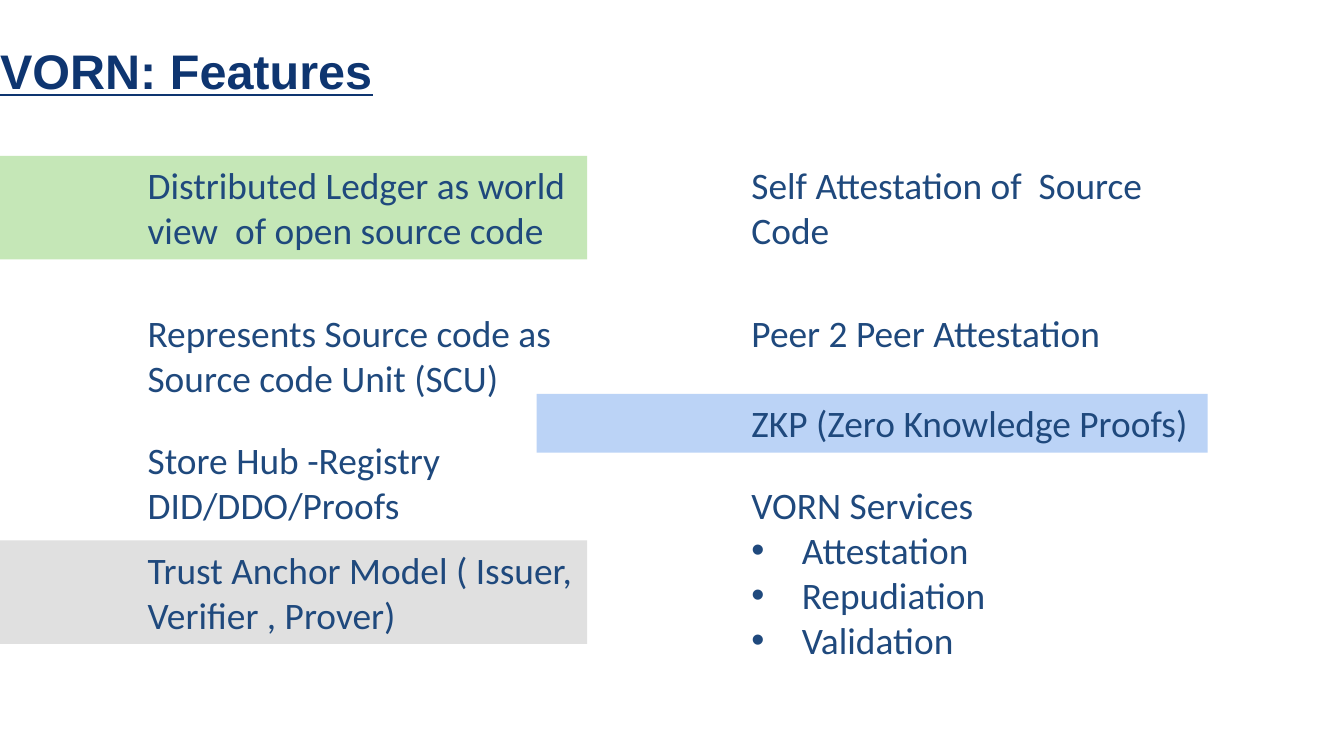
from lxml import etree
from pptx import Presentation
from pptx.dml.color import RGBColor
from pptx.enum.shapes import MSO_SHAPE
from pptx.enum.text import MSO_ANCHOR, MSO_AUTO_SIZE, PP_ALIGN
from pptx.oxml.ns import qn
from pptx.util import Pt

RECTANGLE = MSO_SHAPE.RECTANGLE
TOP = MSO_ANCHOR.TOP
LEFT = PP_ALIGN.LEFT
NO_AUTOFIT = MSO_AUTO_SIZE.NONE

NAVY, BLUE = "0E3570", "1F497D"
GREEN, GREY, PALE_BLUE = "C5E7B7", "E0E0E0", "BBD3F6"
PROJECT = "VORN"
TEXT_INDENT = 72
BULLET_INDENT, BULLET_HANG = 99, 27
ONE_LINE, TWO_LINES = 31.5, 55.5


def color(hex_string):
    return RGBColor.from_string(hex_string)


def write(paragraph, text, font="Calibri", size=20, fill=BLUE, bold=False,
          underline=False, level=0, indent=0, hang=0, bullet=None, spacing=None):
    paragraph.alignment = LEFT
    paragraph.level = level
    paragraph.line_spacing = spacing
    run = paragraph.add_run()
    run.text = text
    run.font.name = font
    run.font.size = Pt(size)
    run.font.bold = bold
    run.font.underline = underline
    run.font.color.rgb = color(fill)
    properties = paragraph._p.get_or_add_pPr()
    properties.set("marL", str(Pt(indent)))
    properties.set("indent", str(Pt(-hang)))
    if bullet:
        etree.SubElement(properties, qn("a:buFont"), typeface="Arial")
        etree.SubElement(properties, qn("a:buChar"), char=bullet)


def place_title(slide, text, left, top, width, height):
    title = slide.shapes.title
    title.left, title.top = Pt(left), Pt(top)
    title.width, title.height = Pt(width), Pt(height)
    frame = title.text_frame
    frame.auto_size = NO_AUTOFIT
    frame.word_wrap = True
    frame.vertical_anchor = TOP
    frame.margin_left = 0
    write(frame.paragraphs[0], text, font="Arial", size=26, fill=NAVY,
          bold=True, underline=True, spacing=0.98)


def add_feature(slide, text, left, top, width, height, band=None,
                level=2, indent=TEXT_INDENT, details=()):
    """A feature, on a coloured band if one is given, with bulleted details."""
    box = Pt(left), Pt(top), Pt(width), Pt(height)
    if band:
        feature = slide.shapes.add_shape(RECTANGLE, *box)
        feature.shadow.inherit = False
        feature.fill.solid()
        feature.fill.fore_color.rgb = color(band)
        feature.line.fill.background()
    else:
        feature = slide.shapes.add_textbox(*box)
    frame = feature.text_frame
    frame.word_wrap = True
    frame.vertical_anchor = TOP
    write(frame.paragraphs[0], text, level=level, indent=indent)
    for detail in details:
        write(frame.add_paragraph(), detail, level=level,
              indent=BULLET_INDENT, hang=BULLET_HANG, bullet="•")


def add_ledger_column(slide, left, top, width):
    add_feature(slide, "Trust Anchor Model ( Issuer, Verifier , Prover)",
                left, top + 206, width, TWO_LINES, band=GREY)
    add_feature(slide, "Store Hub -Registry DID/DDO/Proofs",
                left, top + 147, width, TWO_LINES)
    add_feature(slide, "Represents Source code as Source code Unit (SCU)",
                left, top + 79, width + 3.5, 80)
    add_feature(slide, "Distributed Ledger as world view  of open source code",
                left, top, width, TWO_LINES, band=GREEN)


def add_attestation_column(slide, left, top, width):
    add_feature(slide, f"{PROJECT} Services", left, top + 171.5, width + 11, 104.5,
                details=("Attestation", "Repudiation", "Validation"))
    add_feature(slide, "Peer 2 Peer Attestation",
                left, top + 79, width - 28, ONE_LINE)
    # The band starts half an indent further left, so its text stays aligned
    outdent = TEXT_INDENT / 2
    add_feature(slide, "ZKP (Zero Knowledge Proofs)", left - outdent, top + 127.5,
                width + outdent, ONE_LINE, band=PALE_BLUE,
                level=3, indent=TEXT_INDENT + outdent)
    add_feature(slide, "Self Attestation of  Source Code",
                left, top, width, TWO_LINES)


def main():
    deck = Presentation()
    deck.slide_width, deck.slide_height = Pt(720), Pt(405)
    slide = deck.slides.add_slide(deck.slide_layouts[5])
    place_title(slide, f"{PROJECT}: Features", 0, 20, 252, 71.5)
    add_ledger_column(slide, 0, 83.5, 314.5)
    add_attestation_column(slide, 323.5, 83.5, 323.5)
    deck.save("out.pptx")


if __name__ == "__main__":
    main()
